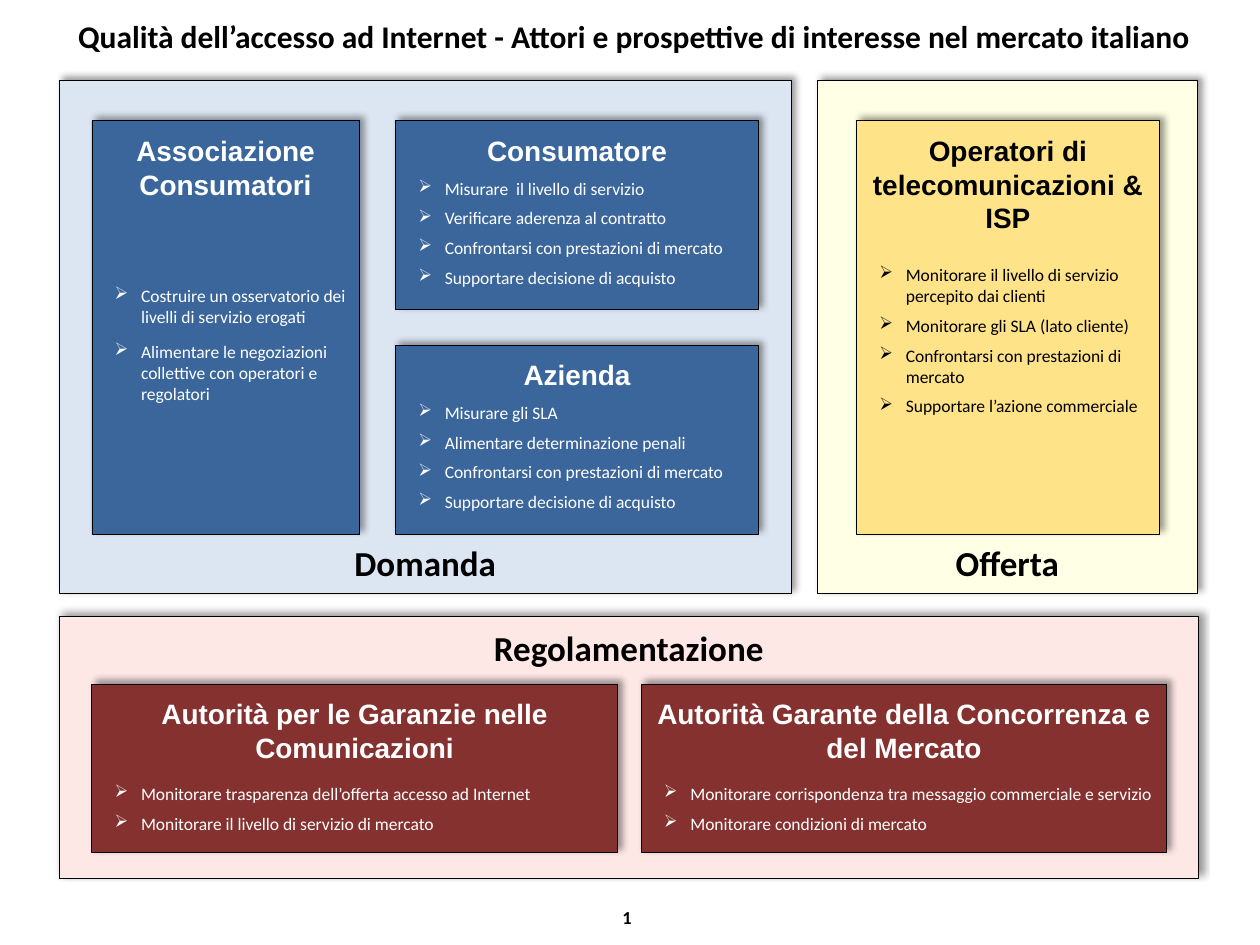
from lxml.etree import SubElement
from pptx import Presentation
from pptx.dml.color import RGBColor
from pptx.enum.shapes import MSO_SHAPE
from pptx.enum.text import MSO_ANCHOR, PP_ALIGN
from pptx.oxml.ns import qn
from pptx.util import Inches, Pt


def write(frame, text, size=10, color="000000", font="Calibri", bold=False,
          align=PP_ALIGN.CENTER, before=0, after=0, bullet=False, new=False):
    par = frame.add_paragraph() if new else frame.paragraphs[0]
    par.alignment = align
    par.space_before, par.space_after = Pt(before), Pt(after)
    if bullet:
        props = par._p.get_or_add_pPr()
        props.set("marL", str(Inches(0.31)))
        props.set("indent", str(Inches(-0.21)))
        SubElement(props, qn("a:buChar"), char="➢")
    run = par.add_run()
    run.text = text
    run.font.size, run.font.name, run.font.bold = Pt(size), font, bold
    run.font.color.rgb = RGBColor.from_string(color)


def panel(box, fill, pads, anchor=MSO_ANCHOR.TOP):
    rect = slide.shapes.add_shape(MSO_SHAPE.RECTANGLE, *map(Inches, box))
    rect.fill.solid()
    rect.fill.fore_color.rgb = RGBColor.from_string(fill)
    rect.line.color.rgb = RGBColor.from_string("000000")
    rect.line.width = Pt(0.5)
    # Soft shadow towards the upper right
    rect.shadow.inherit = False
    effect = rect._element.spPr.find(qn("a:effectLst"))
    shade = SubElement(effect, qn("a:outerShdw"), blurRad=str(Pt(4)), dist=str(Pt(3)),
                       dir=str(315 * 60000), algn="bl", rotWithShape="0")
    tint = SubElement(shade, qn("a:srgbClr"), val="000000")
    SubElement(tint, qn("a:alpha"), val="40000")
    frame = rect.text_frame
    frame.word_wrap = True
    frame.vertical_anchor = anchor
    (frame.margin_left, frame.margin_top,
     frame.margin_right, frame.margin_bottom) = map(Inches, pads)
    return frame


deck = Presentation()
deck.slide_width, deck.slide_height = Inches(10), Inches(7.5)
slide = deck.slides.add_slide(deck.slide_layouts[5])

# Title
title = slide.shapes.title
title.left, title.top = Inches(0.26), Inches(0.05)
title.width, title.height = Inches(9.45), Inches(0.47)
frame = title.text_frame
frame.word_wrap = True
frame.vertical_anchor = MSO_ANCHOR.MIDDLE
frame.margin_left = Inches(0.1)
frame.margin_top = frame.margin_right = frame.margin_bottom = 0
write(frame, "Qualità dell’accesso ad Internet - Attori e prospettive di interesse "
      "nel mercato italiano", size=18, bold=True)

# Market areas
low = (0.04, 0.04, 0.04, 0.08)
areas = [
    ("Domanda", (0.47, 0.64, 5.81, 4.07), "DCE6F2", low, MSO_ANCHOR.BOTTOM),
    ("Offerta", (6.49, 0.64, 3.01, 4.07), "FFFFE5", low, MSO_ANCHOR.BOTTOM),
    ("Regolamentazione", (0.47, 4.89, 9.04, 2.08), "FEE8E6",
     (0.1, 0.08, 0.1, 0.05), MSO_ANCHOR.TOP),
]
for name, box, fill, pads, anchor in areas:
    write(panel(box, fill, pads, anchor), name, size=20, bold=True)

# Actors: name, box, fill, text colour, gap under name, gap before and after points, points
blue, gold, red = "3A669C", "FFE389", "85312F"
white, black = "FFFFFF", "000000"
actors = [
    ("Consumatore", (3.14, 0.96, 2.88, 1.5), blue, white, 6, 5, 0,
     ["Misurare  il livello di servizio", "Verificare aderenza al contratto",
      "Confrontarsi con prestazioni di mercato", "Supportare decisione di acquisto"]),
    ("Azienda", (3.14, 2.74, 2.88, 1.5), blue, white, 6, 5, 0,
     ["Misurare gli SLA", "Alimentare determinazione penali",
      "Confrontarsi con prestazioni di mercato", "Supportare decisione di acquisto"]),
    ("Associazione Consumatori", (0.73, 0.96, 2.12, 3.28), blue, white, 48, 5, 3,
     ["Costruire un osservatorio dei livelli di servizio erogati",
      "Alimentare le negoziazioni collettive con operatori e regolatori"]),
    ("Operatori di telecomunicazioni & ISP", (6.8, 0.96, 2.4, 3.28), gold, black, 17, 5, 0,
     ["Monitorare il livello di servizio percepito dai clienti",
      "Monitorare gli SLA (lato cliente)",
      "Confrontarsi con prestazioni di mercato", "Supportare l’azione commerciale"]),
    ("Autorità Garante della Concorrenza e del Mercato", (5.09, 5.43, 4.17, 1.34),
     red, white, 11, 5, 0,
     ["Monitorare corrispondenza tra messaggio commerciale e servizio",
      "Monitorare condizioni di mercato"]),
    ("Autorità per le Garanzie nelle Comunicazioni", (0.73, 5.43, 4.17, 1.34),
     red, white, 11, 5, 0,
     ["Monitorare trasparenza dell’offerta accesso ad Internet",
      "Monitorare il livello di servizio di mercato"]),
]
for name, box, fill, color, gap, before, after, points in actors:
    frame = panel(box, fill, (0.08, 0.1, 0.08, 0.05))
    write(frame, name, size=16, color=color, font="Arial", bold=True, after=gap)
    for i, point in enumerate(points):
        write(frame, point, color=color, align=PP_ALIGN.LEFT, before=before if i else 0,
              after=after, bullet=True, new=True)

# Page number
page = slide.shapes.add_textbox(Inches(4.84), Inches(7.14), Inches(0.28), Inches(0.29))
page.text_frame.word_wrap = False
write(page.text_frame, "1", size=10.5, bold=True, align=PP_ALIGN.LEFT)

deck.save("out.pptx")
